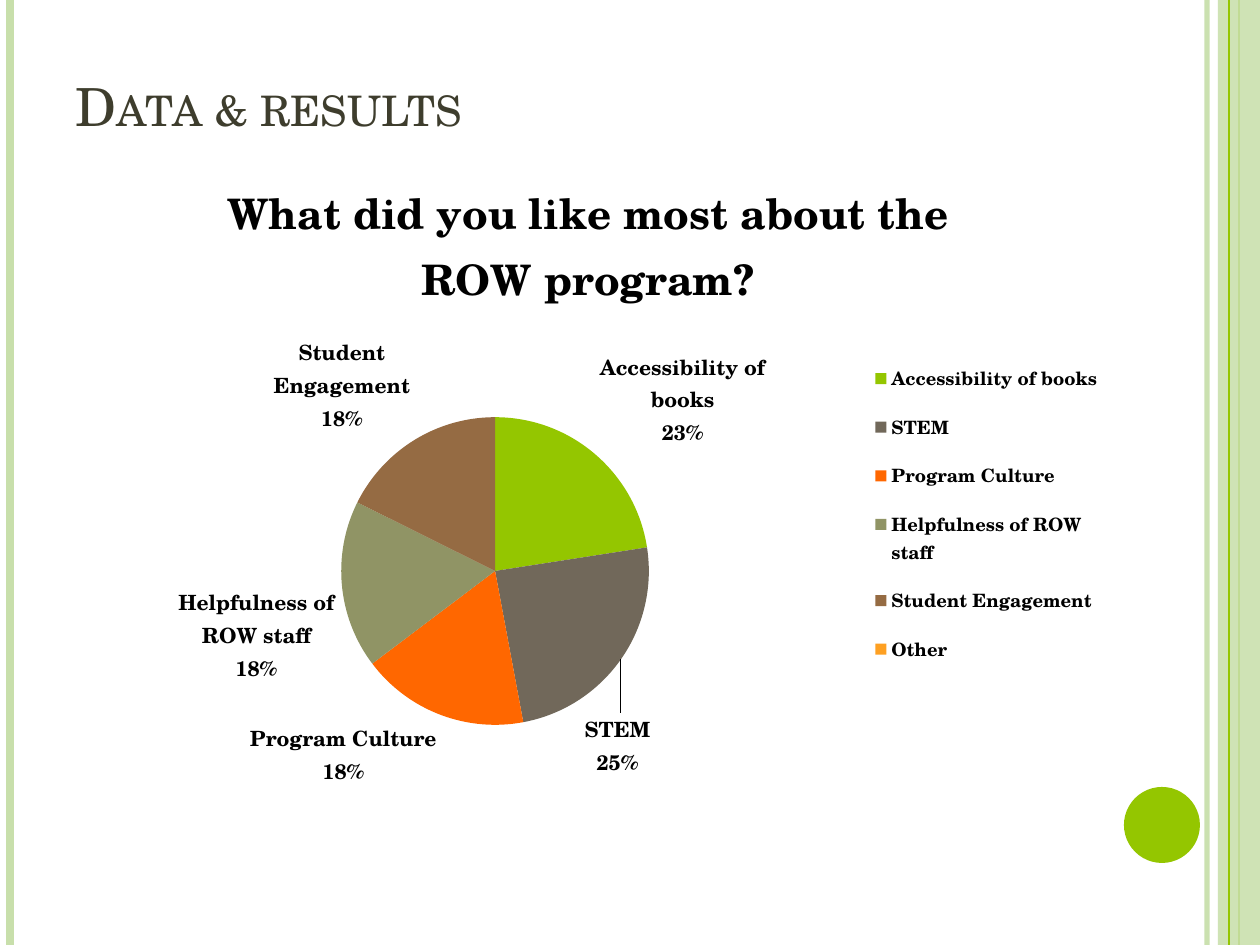
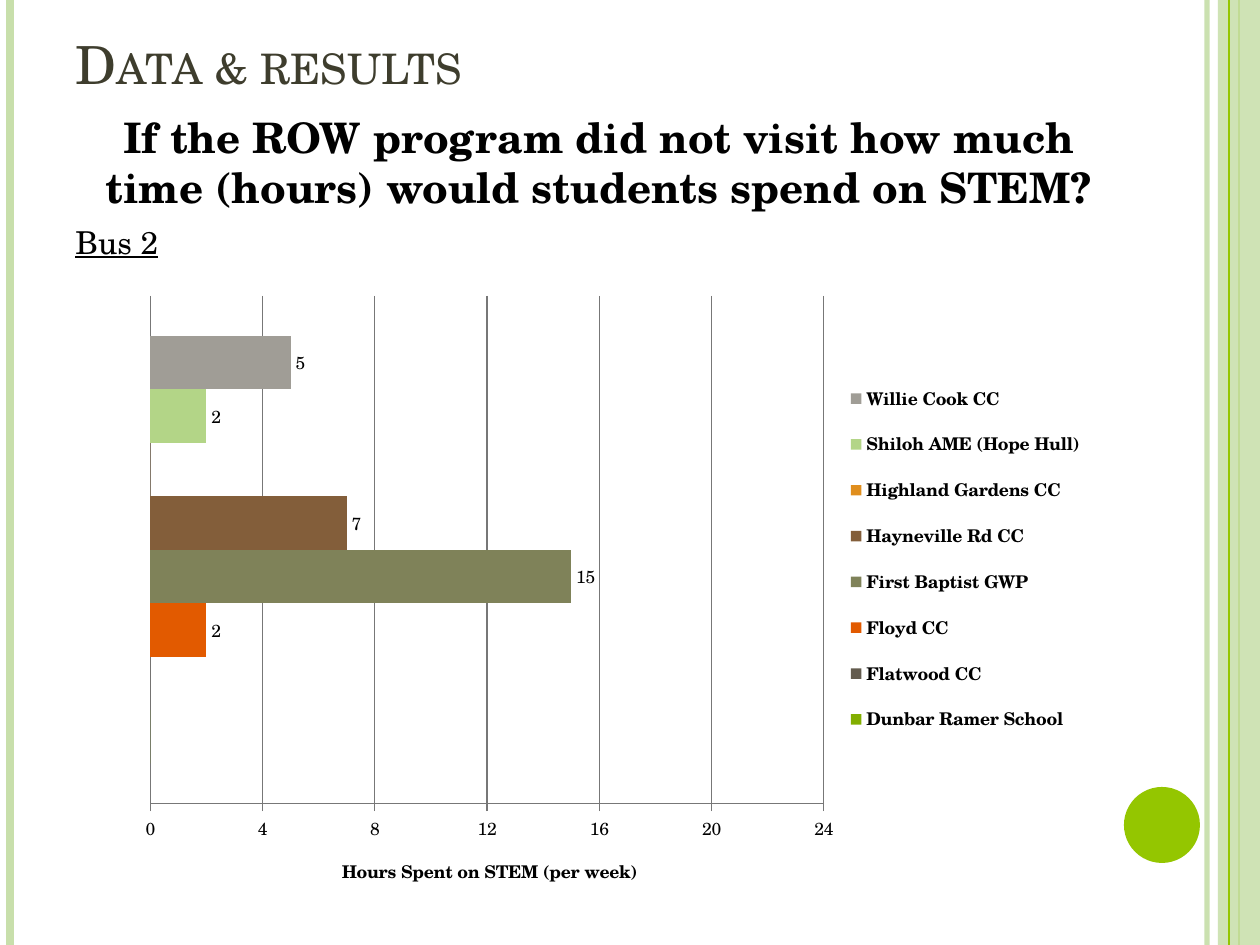
"""Build two slides of survey results, one with a pie chart and one with a bar chart."""
import copy
import dataclasses
import typing

import pptx
import pptx.chart.chart
import pptx.chart.data
import pptx.dml.color
import pptx.enum.chart
import pptx.enum.shapes
import pptx.enum.text
import pptx.oxml
import pptx.oxml.ns
import pptx.slide
import pptx.util

EMU_PER_INCH = 914400
PX_PER_INCH = 126
SLIDE_WIDTH, SLIDE_HEIGHT = 1260, 945
TITLE_ONLY = 5


@dataclasses.dataclass(frozen=True)
class Theme:
    font: str = "TeX Gyre Schola"
    ink: str = "000000"
    title_ink: str = "3E3D2D"
    pale: str = "C8DFAB"
    accent: str = "94C600"
    grid: str = "777777"
    title_size: float = 30
    question_size: float = 24
    bus_size: float = 18
    label_size: float = 12
    pie_legend_size: float = 10.5
    chart_size: float = 10
    slices: tuple[str, ...] = ("94C600", "71685A", "FF6700", "909465", "956B43", "FEA022")


THEME = Theme()


@dataclasses.dataclass(frozen=True)
class Box:
    left: int
    top: int
    width: int
    height: int

    def emu(self) -> tuple[pptx.util.Emu, ...]:
        return tuple(px(length) for length in dataclasses.astuple(self))


@dataclasses.dataclass(frozen=True)
class Stripe:
    x: int
    color: str
    weight: float
    opacity: int = 100


@dataclasses.dataclass(frozen=True)
class Site:
    name: str
    hours: int
    color: str


STRIPES_BELOW = (
    Stripe(1207, THEME.pale, 3, 93),
    Stripe(10, THEME.pale, 4.5),
    Stripe(1239, THEME.accent, 1.5),
)
STRIPE_ABOVE = Stripe(1229, THEME.accent, 0.75)
SIDE_BAND = Box(1218, 0, 42, SLIDE_HEIGHT)
CIRCLE = Box(1124, 787, 76, 76)

FAVOURITES = {
    "Accessibility of books": 23,
    "STEM": 25,
    "Program Culture": 18,
    "Helpfulness of ROW staff": 18,
    "Student Engagement": 18,
    "Other": 0,
}
SITES = (
    Site("Dunbar Ramer School", 0, "82AE00"),
    Site("Flatwood CC", 0, "635B4E"),
    Site("Floyd CC", 2, "E25A00"),
    Site("First Baptist GWP", 15, "7F8259"),
    Site("Hayneville Rd CC", 7, "835E3A"),
    Site("Highland Gardens CC", 0, "E08E1D"),
    Site("Shiloh AME (Hope Hull)", 2, "B3D587"),
    Site("Willie Cook CC", 5, "A09D96"),
)


def px(length: int) -> pptx.util.Emu:
    return pptx.util.Emu(round(length * EMU_PER_INCH / PX_PER_INCH))


def rgb(color: str) -> pptx.dml.color.RGBColor:
    return pptx.dml.color.RGBColor.from_string(color)


def apply(target: typing.Any, values: dict[str, typing.Any]) -> None:
    for name, value in values.items():
        setattr(target, name, value)


def style_font(font: typing.Any, size: float, color: str = THEME.ink, **extra: bool) -> None:
    apply(font, {"name": THEME.font, "size": pptx.util.Pt(size), **extra})
    font.color.rgb = rgb(color)


def set_opacity(shape: typing.Any, percent: int) -> None:
    for color in shape.element.xpath("./p:spPr//a:srgbClr"):
        alpha = pptx.oxml.parse_xml(
            f'<a:alpha {pptx.oxml.ns.nsdecls("a")} val="{percent * 1000}"/>')
        color.append(alpha)


def add_stripe(slide: pptx.slide.Slide, stripe: Stripe) -> None:
    connector = slide.shapes.add_connector(
        pptx.enum.shapes.MSO_CONNECTOR.STRAIGHT,
        px(stripe.x), 0, px(stripe.x), px(SLIDE_HEIGHT))
    connector.line.color.rgb = rgb(stripe.color)
    connector.line.width = pptx.util.Pt(stripe.weight)
    connector.element.spPr.append(
        pptx.oxml.parse_xml(f'<a:effectLst {pptx.oxml.ns.nsdecls("a")}/>'))
    if stripe.opacity < 100:
        set_opacity(connector, stripe.opacity)


def add_filled(slide: pptx.slide.Slide, kind: pptx.enum.shapes.MSO_SHAPE,
               box: Box, color: str, opacity: int = 100) -> None:
    shape = slide.shapes.add_shape(kind, *box.emu())
    shape.shadow.inherit = False
    shape.fill.solid()
    shape.fill.fore_color.rgb = rgb(color)
    shape.line.fill.background()
    if opacity < 100:
        set_opacity(shape, opacity)


def add_results_slide(presentation: typing.Any, title_box: Box) -> pptx.slide.Slide:
    slide = presentation.slides.add_slide(presentation.slide_layouts[TITLE_ONLY])
    for stripe in STRIPES_BELOW:
        add_stripe(slide, stripe)
    add_filled(slide, pptx.enum.shapes.MSO_SHAPE.RECTANGLE, SIDE_BAND, THEME.pale, 87)
    add_stripe(slide, STRIPE_ABOVE)
    add_filled(slide, pptx.enum.shapes.MSO_SHAPE.OVAL, CIRCLE, THEME.accent)

    title = slide.shapes.title
    apply(title, dict(zip(("left", "top", "width", "height"), title_box.emu())))
    title.text_frame.text = "Data & results"
    apply(title.text_frame, {
        "vertical_anchor": pptx.enum.text.MSO_ANCHOR.BOTTOM,
        "auto_size": pptx.enum.text.MSO_AUTO_SIZE.NONE,
        "word_wrap": True,
    })
    paragraph = title.text_frame.paragraphs[0]
    paragraph.alignment = pptx.enum.text.PP_ALIGN.LEFT
    run = paragraph.runs[0]
    style_font(run.font, THEME.title_size, THEME.title_ink)
    run.font.element.set("cap", "small") if hasattr(run.font, "element") else \
        title.element.xpath(".//a:rPr")[0].set("cap", "small")
    return slide


def layout_xml(x: float, y: float, width: float = 0, height: float = 0,
               inner: bool = False) -> typing.Any:
    """Return a manual chart layout; without a size it is an offset."""
    parts = []
    if inner:
        parts.append('<c:layoutTarget val="inner"/>')
    if width:
        parts.append('<c:xMode val="edge"/><c:yMode val="edge"/>')
    parts.append(f'<c:x val="{x:.3f}"/><c:y val="{y:.3f}"/>')
    if width:
        parts.append(f'<c:w val="{width:.3f}"/><c:h val="{height:.3f}"/>')
    return pptx.oxml.parse_xml(
        f'<c:layout {pptx.oxml.ns.nsdecls("c")}><c:manualLayout>'
        f'{"".join(parts)}</c:manualLayout></c:layout>')


def place_part(chart: pptx.chart.chart.Chart, tag: str, part: Box, frame: Box) -> None:
    element = chart.element.xpath(f"./c:chart/c:{tag}")[0]
    for old in element.xpath("./c:layout"):
        element.remove(old)
    is_plot = tag == "plotArea"
    layout = layout_xml((part.left - frame.left) / frame.width,
                        (part.top - frame.top) / frame.height,
                        part.width / frame.width, part.height / frame.height, is_plot)
    element.insert(0 if is_plot else 1, layout)


def add_chart(slide: pptx.slide.Slide, kind: pptx.enum.chart.XL_CHART_TYPE,
              data: pptx.chart.data.CategoryChartData, frame: Box, plot: Box,
              legend: Box, legend_size: float) -> pptx.chart.chart.Chart:
    chart = slide.shapes.add_chart(kind, *frame.emu(), data).chart
    style_font(chart.font, THEME.chart_size)
    chart.has_legend = True
    apply(chart.legend, {
        "position": pptx.enum.chart.XL_LEGEND_POSITION.RIGHT,
        "include_in_layout": False,
    })
    style_font(chart.legend.font, legend_size, bold=True)
    place_part(chart, "plotArea", plot, frame)
    place_part(chart, "legend", legend, frame)
    return chart


def adjust_pie_labels(chart: pptx.chart.chart.Chart) -> None:
    """Put names and shares on two lines, move the STEM label and hide the Other label."""
    namespace = pptx.oxml.ns.nsdecls("c")
    labels = chart.element.xpath(".//c:ser/c:dLbls")[0]
    labels.xpath("./c:showBubbleSize")[0].addnext(
        pptx.oxml.parse_xml(f"<c:separator {namespace}>\n</c:separator>"))
    names = list(FAVOURITES)
    stem = pptx.oxml.parse_xml(
        f'<c:dLbl {namespace}><c:idx val="{names.index("STEM")}"/></c:dLbl>')
    stem.append(layout_xml(-0.04, 0.07))
    for child in labels.xpath("./*[not(self::c:showLeaderLines)]"):
        stem.append(copy.deepcopy(child))
    other = pptx.oxml.parse_xml(
        f'<c:dLbl {namespace}><c:idx val="{names.index("Other")}"/>'
        '<c:delete val="1"/></c:dLbl>')
    labels.insert(0, stem)
    labels.insert(1, other)


def add_favourites_slide(presentation: typing.Any) -> None:
    slide = add_results_slide(presentation, Box(63, 21, 1029, 122))
    data = pptx.chart.data.CategoryChartData()
    data.categories = list(FAVOURITES)
    data.add_series("Series 1", FAVOURITES.values())
    chart = add_chart(slide, pptx.enum.chart.XL_CHART_TYPE.PIE, data,
                      Box(63, 147, 1050, 693), Box(341, 417, 308, 308),
                      Box(866, 344, 240, 340), THEME.pie_legend_size)
    chart.has_title = True
    title = chart.chart_title.text_frame
    title.text = "What did you like most about the ROW program?"
    style_font(title.paragraphs[0].runs[0].font, THEME.question_size, bold=True)

    series = chart.plots[0].series[0]
    for index, color in enumerate(THEME.slices):
        fill = series.points[index].format.fill
        fill.solid()
        fill.fore_color.rgb = rgb(color)
    apply(series.data_labels, {
        "show_value": False,
        "show_percentage": True,
        "show_category_name": True,
        "number_format": "0%",
        "number_format_is_linked": False,
        "position": pptx.enum.chart.XL_LABEL_POSITION.OUTSIDE_END,
    })
    style_font(series.data_labels.font, THEME.label_size, bold=True)
    adjust_pie_labels(chart)


def add_question(slide: pptx.slide.Slide) -> None:
    frame = slide.shapes.add_textbox(*Box(63, 105, 1071, 735).emu()).text_frame
    frame.word_wrap = True
    lines = (
        ("If the ROW program did not visit how much time (hours) would students spend on STEM?",
         pptx.enum.text.PP_ALIGN.CENTER, THEME.question_size, {"bold": True}),
        ("Bus 2", pptx.enum.text.PP_ALIGN.LEFT, THEME.bus_size, {"underline": True}),
    )
    for index, (text, alignment, size, emphasis) in enumerate(lines):
        paragraph = frame.add_paragraph() if index else frame.paragraphs[0]
        apply(paragraph, {"alignment": alignment, "space_before": pptx.util.Pt(6)})
        run = paragraph.add_run()
        run.text = text
        style_font(run.font, size, **emphasis)


def add_hours_slide(presentation: typing.Any) -> None:
    slide = add_results_slide(presentation, Box(63, 10, 1029, 91))
    add_question(slide)
    data = pptx.chart.data.CategoryChartData()
    data.categories = ["1"]
    for site in SITES:
        data.add_series(site.name, [site.hours])
    chart = add_chart(slide, pptx.enum.chart.XL_CHART_TYPE.BAR_CLUSTERED, data,
                      Box(126, 284, 976, 630), Box(150, 296, 673, 508),
                      Box(842, 366, 246, 386), THEME.chart_size)
    chart.has_title = False
    apply(chart.plots[0], {"gap_width": 150, "vary_by_categories": False})
    for site, series in zip(SITES, chart.plots[0].series):
        series.format.fill.solid()
        series.format.fill.fore_color.rgb = rgb(site.color)
        if site.hours:
            series.data_labels.show_value = True
            style_font(series.data_labels.font, THEME.chart_size)
    chart.category_axis.visible = False
    axis = chart.value_axis
    apply(axis, {
        "minimum_scale": 0, "maximum_scale": 24, "major_unit": 4,
        "has_major_gridlines": True,
        "major_tick_mark": pptx.enum.chart.XL_TICK_MARK.OUTSIDE,
    })
    for line in (axis.format.line, axis.major_gridlines.format.line):
        line.color.rgb = rgb(THEME.grid)
    title = axis.axis_title.text_frame
    title.text = "Hours Spent on STEM (per week)"
    style_font(title.paragraphs[0].runs[0].font, THEME.chart_size, bold=True)


def main() -> None:
    presentation = pptx.Presentation()
    apply(presentation, {"slide_width": px(SLIDE_WIDTH), "slide_height": px(SLIDE_HEIGHT)})
    add_favourites_slide(presentation)
    add_hours_slide(presentation)
    presentation.save("out.pptx")


if __name__ == "__main__":
    main()
